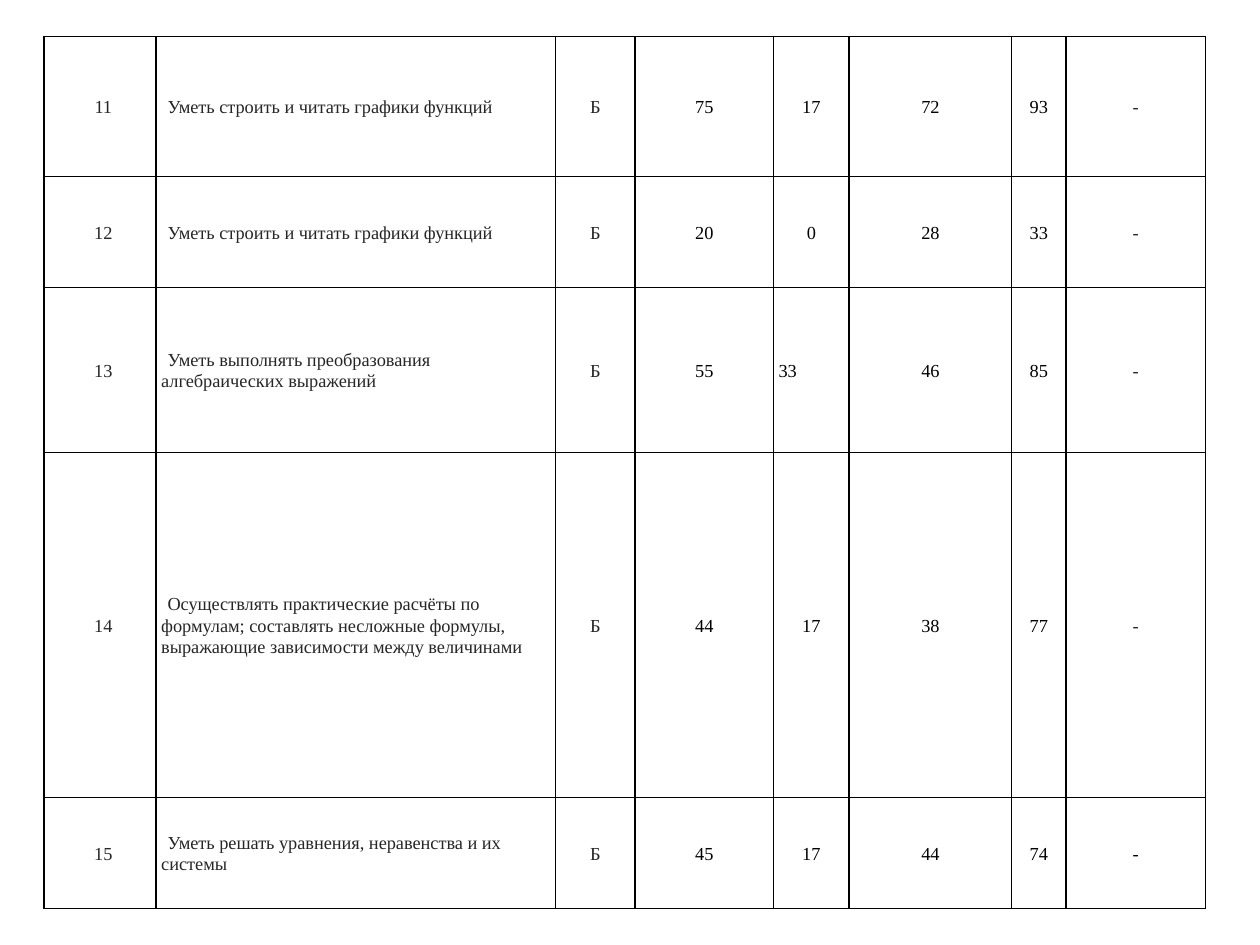
from dataclasses import dataclass

from lxml.etree import SubElement
from pptx import Presentation
from pptx.dml.color import RGBColor
from pptx.enum.text import MSO_ANCHOR, PP_ALIGN
from pptx.oxml.ns import qn
from pptx.table import Table, _Cell
from pptx.util import Inches, Pt

BLACK, GREY, WHITE = "000000", "262626", "FFFFFF"
FONT = {"name": "Times New Roman", "size": Pt(10.5)}
CELL = {
    "vertical_anchor": MSO_ANCHOR.MIDDLE,
    "margin_left": Inches(0.04),
    "margin_top": Inches(0.01),
    "margin_right": Inches(0.04),
    "margin_bottom": Inches(0),
}
EXACT = Pt(12.1)
LOOSE = 1.06


@dataclass
class Col:
    width: float
    color: str = BLACK
    align: PP_ALIGN = PP_ALIGN.CENTER
    indent: float = 0


@dataclass
class Task:
    number: int
    skill: str
    rates: tuple[int, ...]
    height: float
    space: float | Pt = EXACT

    def texts(self) -> list[str]:
        return [str(self.number), self.skill, "Б", *map(str, self.rates), "-"]


COLS = [
    Col(0.89, GREY, indent=0.05),
    Col(3.17, GREY, PP_ALIGN.LEFT, 0.05),
    Col(0.63, GREY, indent=-0.08),
    Col(1.1),
    Col(0.6),
    Col(1.29),
    Col(0.43),
    Col(1.11, GREY),
]
GRAPHS = "Уметь строить и читать графики функций"
TASKS = [
    Task(11, GRAPHS, (75, 17, 72, 93), 1.11, LOOSE),
    Task(12, GRAPHS, (20, 0, 28, 33), 0.88),
    Task(13, "Уметь выполнять преобразования алгебраических выражений",
         (55, 33, 46, 85), 1.31),
    Task(14, "Осуществлять практические расчёты по формулам; составлять "
         "несложные формулы, выражающие зависимости между величинами",
         (44, 17, 38, 77), 2.74, LOOSE),
    Task(15, "Уметь решать уравнения, неравенства и их системы",
         (45, 17, 44, 74), 0.88),
]


def paint(target, color: str) -> None:
    """Give a font or a fill a solid colour."""
    if hasattr(target, "solid"):
        target.solid()
        target.fore_color.rgb = RGBColor.from_string(color)
    else:
        target.color.rgb = RGBColor.from_string(color)


def apply(target, values: dict) -> None:
    for name, value in values.items():
        setattr(target, name, value)


def frame(cell: _Cell) -> None:
    """Draw the four borders; they must come before the fill in the XML."""
    props = cell._tc.get_or_add_tcPr()
    for place, side in enumerate(("lnL", "lnR", "lnT", "lnB")):
        line = SubElement(props, qn(f"a:{side}"), w=str(Pt(1)))
        fill = SubElement(line, qn("a:solidFill"))
        SubElement(fill, qn("a:srgbClr"), val=BLACK)
        props.insert(place, line)


def write(cell: _Cell, text: str, col: Col, space: float | Pt) -> None:
    apply(cell, CELL)
    paint(cell.fill, WHITE)
    frame(cell)
    para = cell.text_frame.paragraphs[0]
    apply(para, {"alignment": col.align, "line_spacing": space})
    if col.indent:
        para._p.get_or_add_pPr().set("indent", str(Inches(col.indent)))
    run = para.add_run()
    run.text = text
    apply(run.font, FONT)
    paint(run.font, col.color)


def fill_table(table: Table) -> None:
    apply(table, {"first_row": False, "horz_banding": False})
    for index, col in enumerate(COLS):
        table.columns[index].width = Inches(col.width)
    for row, task in enumerate(TASKS):
        table.rows[row].height = Inches(task.height)
        for index, (text, col) in enumerate(zip(task.texts(), COLS)):
            write(table.cell(row, index), text, col, task.space)


def main() -> None:
    deck = Presentation()
    apply(deck, {"slide_width": Inches(10), "slide_height": Inches(7.5)})
    slide = deck.slides.add_slide(deck.slide_layouts[6])
    width = sum(col.width for col in COLS)
    height = sum(task.height for task in TASKS)
    table = slide.shapes.add_table(
        len(TASKS), len(COLS),
        Inches(0.35), Inches(0.29), Inches(width), Inches(height),
    ).table
    fill_table(table)
    # Two cells stand apart from the rule of their column.
    table.cell(2, 4).text_frame.paragraphs[0].alignment = PP_ALIGN.LEFT
    paint(table.cell(4, 7).text_frame.paragraphs[0].runs[0].font, BLACK)
    deck.save("out.pptx")


if __name__ == "__main__":
    main()
